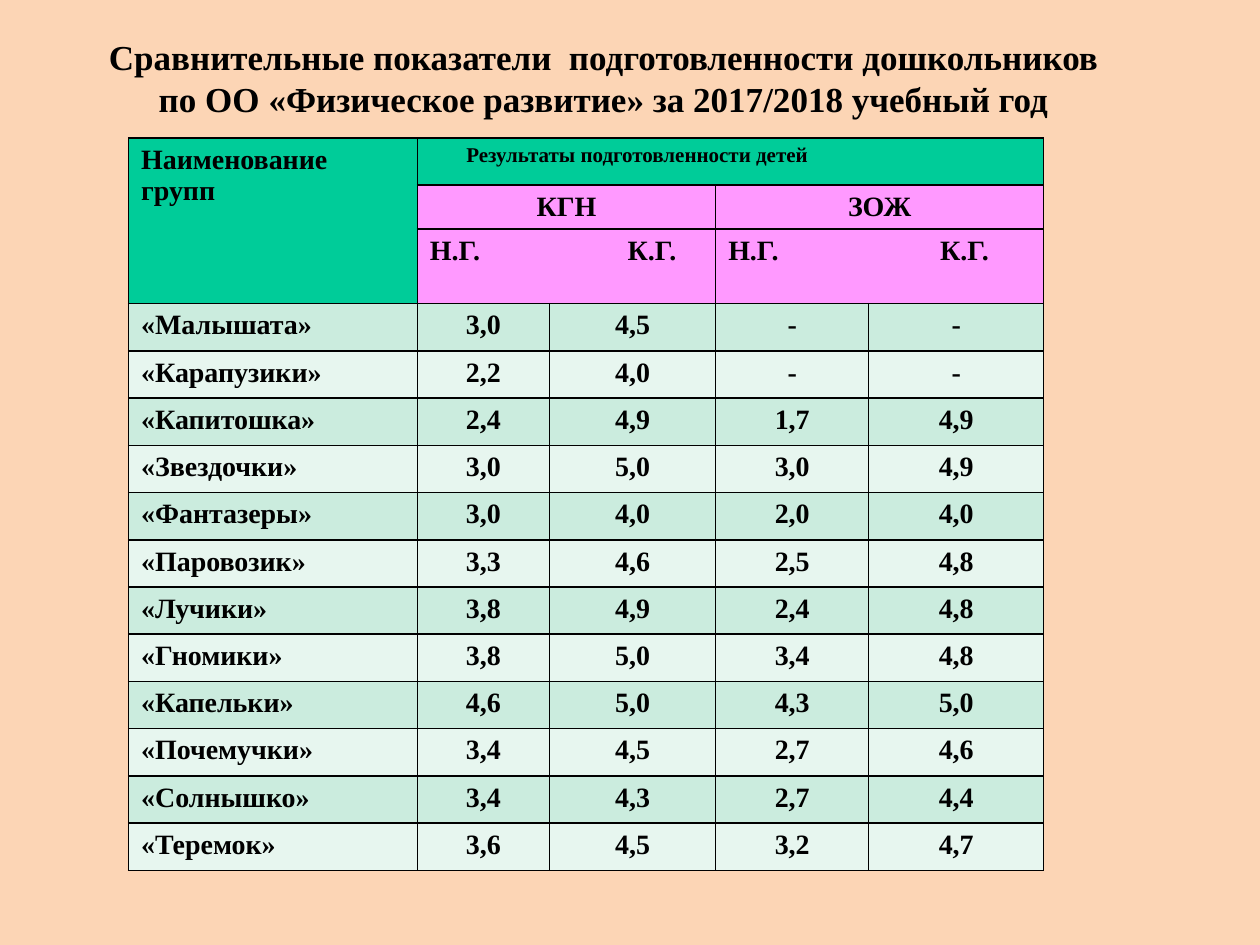
"""Build a slide with a table of preschool readiness results by group."""
from lxml import etree
from pptx import Presentation
from pptx.dml.color import RGBColor
from pptx.enum.text import MSO_ANCHOR, MSO_AUTO_SIZE, PP_ALIGN
from pptx.oxml.ns import qn
from pptx.util import Pt

LEFT, MID = PP_ALIGN.LEFT, PP_ALIGN.CENTER
GREEN, PINK = "00CC99", "FF99FF"
BANDS = ["CBECDE", "E7F6EF"]
GROUPS = [
    ("«Малышата»", "3,0", "4,5", "-", "-"),
    ("«Карапузики»", "2,2", "4,0", "-", "-"),
    ("«Капитошка»", "2,4", "4,9", "1,7", "4,9"),
    ("«Звездочки»", "3,0", "5,0", "3,0", "4,9"),
    ("«Фантазеры»", "3,0", "4,0", "2,0", "4,0"),
    ("«Паровозик»", "3,3", "4,6", "2,5", "4,8"),
    ("«Лучики»", "3,8", "4,9", "2,4", "4,8"),
    ("«Гномики»", "3,8", "5,0", "3,4", "4,8"),
    ("«Капельки»", "4,6", "5,0", "4,3", "5,0"),
    ("«Почемучки»", "3,4", "4,5", "2,7", "4,6"),
    ("«Солнышко»", "3,4", "4,3", "2,7", "4,4"),
    ("«Теремок»", "3,6", "4,5", "3,2", "4,7"),
]
HEADS = [
    (0, 0, 2, 0, GREEN, "Наименование групп", {}),
    (0, 1, 0, 4, GREEN, "Результаты подготовленности детей", {"size": 12}),
    (1, 1, 1, 2, PINK, "КГН", {"align": MID}),
    (1, 3, 1, 4, PINK, "ЗОЖ", {"align": MID}),
    (2, 1, 2, 2, PINK, "Н.Г.\tК.Г.", {"tab": 113}),
    (2, 3, 2, 4, PINK, "Н.Г.\tК.Г.", {"tab": 121}),
]


def color(code):
    return RGBColor.from_string(code)


def write(frame, text, size=16, align=LEFT, tab=None):
    frame.text = text
    for para in frame.paragraphs:
        para.alignment = align
        font = para.runs[0].font
        font.name, font.size, font.bold = "Times New Roman", Pt(size), True
        font.color.rgb = color("000000")
        if tab:
            stops = etree.SubElement(para._p.get_or_add_pPr(), qn("a:tabLst"))
            etree.SubElement(stops, qn("a:tab"), pos=str(Pt(tab)), algn="l")


deck = Presentation()
deck.slide_width, deck.slide_height = Pt(720), Pt(540)
slide = deck.slides.add_slide(deck.slide_layouts[5])
back = slide.background.fill
back.solid()
back.fore_color.rgb = color("FCD5B5")

title = slide.shapes.title
title.left, title.top, title.width, title.height = Pt(48), Pt(16.5), Pt(594), Pt(55.5)
frame = title.text_frame
frame.auto_size = MSO_AUTO_SIZE.NONE
frame.vertical_anchor = MSO_ANCHOR.MIDDLE
frame.word_wrap = False
write(frame, "Сравнительные показатели  подготовленности дошкольников\n"
             "по ОО «Физическое развитие» за 2017/2018 учебный год", size=20, align=MID)

wide = [165, 75.5, 95, 87.5, 100]
high = [27, 25, 42.5] + [27] * len(GROUPS)
table = slide.shapes.add_table(len(high), len(wide), Pt(73.5), Pt(78.75),
                               Pt(sum(wide)), Pt(sum(high))).table
for col, size in zip(table.columns, wide):
    col.width = Pt(size)
for row, size in zip(table.rows, high):
    row.height = Pt(size)

for r, row in enumerate(table.rows):
    for c, cell in enumerate(row.cells):
        props = cell._tc.get_or_add_tcPr()
        for side in ("lnL", "lnR", "lnT", "lnB"):
            line = etree.SubElement(props, qn("a:" + side), w=str(Pt(1)))
            paint = etree.SubElement(line, qn("a:solidFill"))
            etree.SubElement(paint, qn("a:srgbClr"), val="000000")
        cell.fill.solid()
        if r < 3:
            cell.fill.fore_color.rgb = color(PINK if r and c else GREEN)
        else:
            cell.fill.fore_color.rgb = color(BANDS[(r - 3) % 2])
            write(cell.text_frame, GROUPS[r - 3][c], align=MID if c else LEFT)

for top, left, low, right, fill, text, form in HEADS:
    cell = table.cell(top, left)
    cell.merge(table.cell(low, right))
    cell.fill.fore_color.rgb = color(fill)
    write(cell.text_frame, text, **form)
table.cell(0, 1).margin_left = Pt(28)

deck.save("out.pptx")
